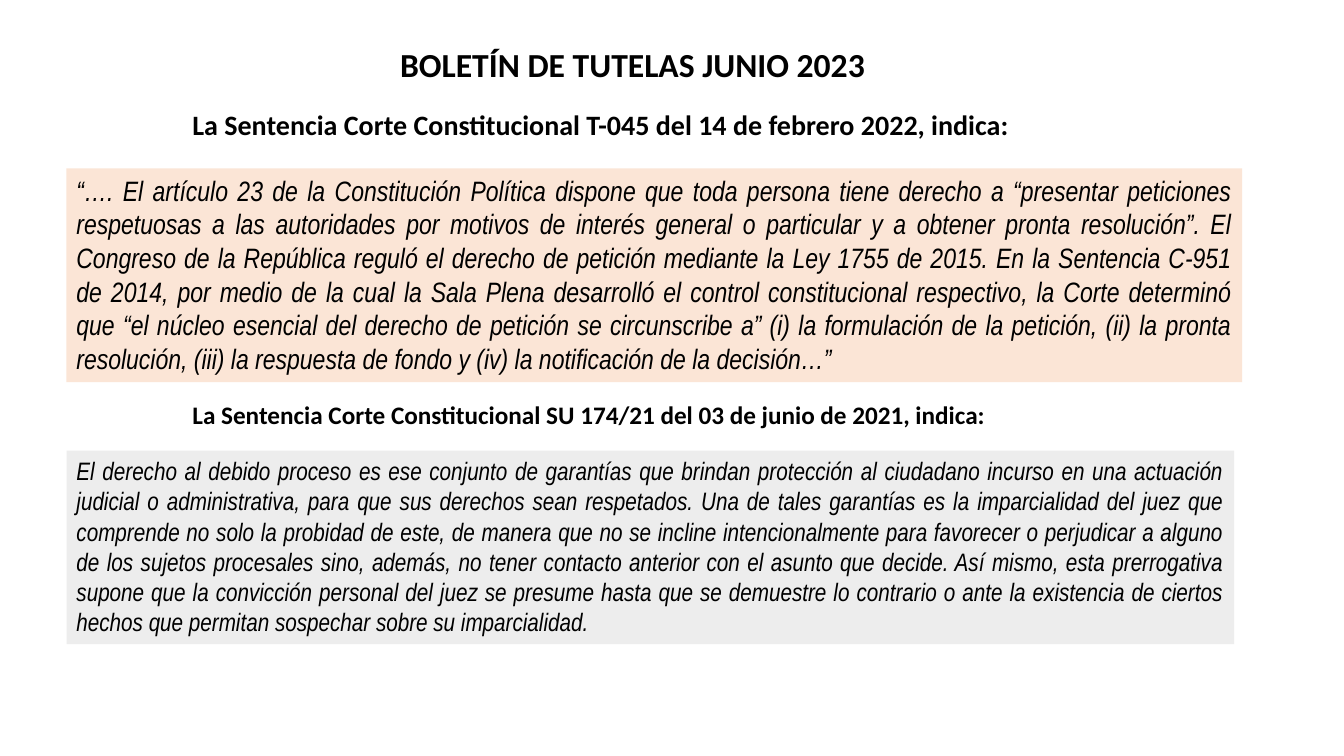
from pptx import Presentation
from pptx.dml.color import RGBColor
from pptx.enum.shapes import MSO_SHAPE
from pptx.enum.text import MSO_ANCHOR, MSO_AUTO_SIZE, PP_ALIGN
from pptx.util import Inches, Pt

BLACK = RGBColor(0x00, 0x00, 0x00)
PEACH = RGBColor(0xFB, 0xE5, 0xD6)
GRAY = RGBColor(0xED, 0xED, 0xED)

# text, (left, top, width, height), size, wraps
HEADINGS = [
    ("BOLETÍN DE TUTELAS JUNIO 2023", (3.87, 0.39, 4.85, 0.5), 24, False),
    ("La Sentencia Corte Constitucional T-045 del 14 de febrero 2022, indica:",
     (1.81, 1.02, 10.06, 0.44), 20, True),
    ("La Sentencia Corte Constitucional SU 174/21 del 03 de junio de 2021, indica:",
     (1.81, 3.91, 10.38, 0.4), 18, True),
]

# text, (left, top, width, height), size, fill
QUOTES = [
    ("“…. El artículo 23 de la Constitución Política dispone que toda persona tiene "
     "derecho a “presentar peticiones respetuosas a las autoridades por motivos de "
     "interés general o particular y a obtener pronta resolución”. El Congreso de la "
     "República reguló el derecho de petición mediante la Ley 1755 de 2015. En la "
     "Sentencia C-951 de 2014, por medio de la cual la Sala Plena desarrolló el control "
     "constitucional respectivo, la Corte determinó que “el núcleo esencial del derecho "
     "de petición se circunscribe a” (i) la formulación de la petición, (ii) la pronta "
     "resolución, (iii) la respuesta de fondo y (iv) la notificación de la decisión…”",
     (0.66, 1.67, 11.66, 2.12), 20, PEACH),
    ("El derecho al debido proceso es ese conjunto de garantías que brindan protección "
     "al ciudadano incurso en una actuación judicial o administrativa, para que sus "
     "derechos sean respetados. Una de tales garantías es la imparcialidad del juez que "
     "comprende no solo la probidad de este, de manera que no se incline "
     "intencionalmente para favorecer o perjudicar a alguno de los sujetos procesales "
     "sino, además, no tener contacto anterior con el asunto que decide. Así mismo, esta "
     "prerrogativa supone que la convicción personal del juez se presume hasta que se "
     "demuestre lo contrario o ante la existencia de ciertos hechos que permitan "
     "sospechar sobre su imparcialidad.",
     (0.66, 4.47, 11.58, 1.92), 18, GRAY),
]


def write_text(shape, text, font_name, size, alignment, wraps=True):
    frame = shape.text_frame
    frame.text = text
    frame.word_wrap = wraps
    frame.auto_size = MSO_AUTO_SIZE.SHAPE_TO_FIT_TEXT
    frame.vertical_anchor = MSO_ANCHOR.TOP
    paragraph = frame.paragraphs[0]
    paragraph.alignment = alignment
    font = paragraph.runs[0].font
    font.name = font_name
    font.size = Pt(size)
    font.color.rgb = BLACK
    return font


presentation = Presentation()
presentation.slide_width = Inches(13.33)
presentation.slide_height = Inches(7.5)
slide = presentation.slides.add_slide(presentation.slide_layouts[6])

for text, box, size, wraps in HEADINGS:
    heading = slide.shapes.add_textbox(*map(Inches, box))
    write_text(heading, text, "Calibri", size, PP_ALIGN.LEFT, wraps).bold = True

for text, box, size, fill in QUOTES:
    quote = slide.shapes.add_shape(MSO_SHAPE.RECTANGLE, *map(Inches, box))
    quote.shadow.inherit = False
    quote.fill.solid()
    quote.fill.fore_color.rgb = fill
    quote.line.fill.background()
    write_text(quote, text, "Arial Narrow", size, PP_ALIGN.JUSTIFY).italic = True

presentation.save("out.pptx")
